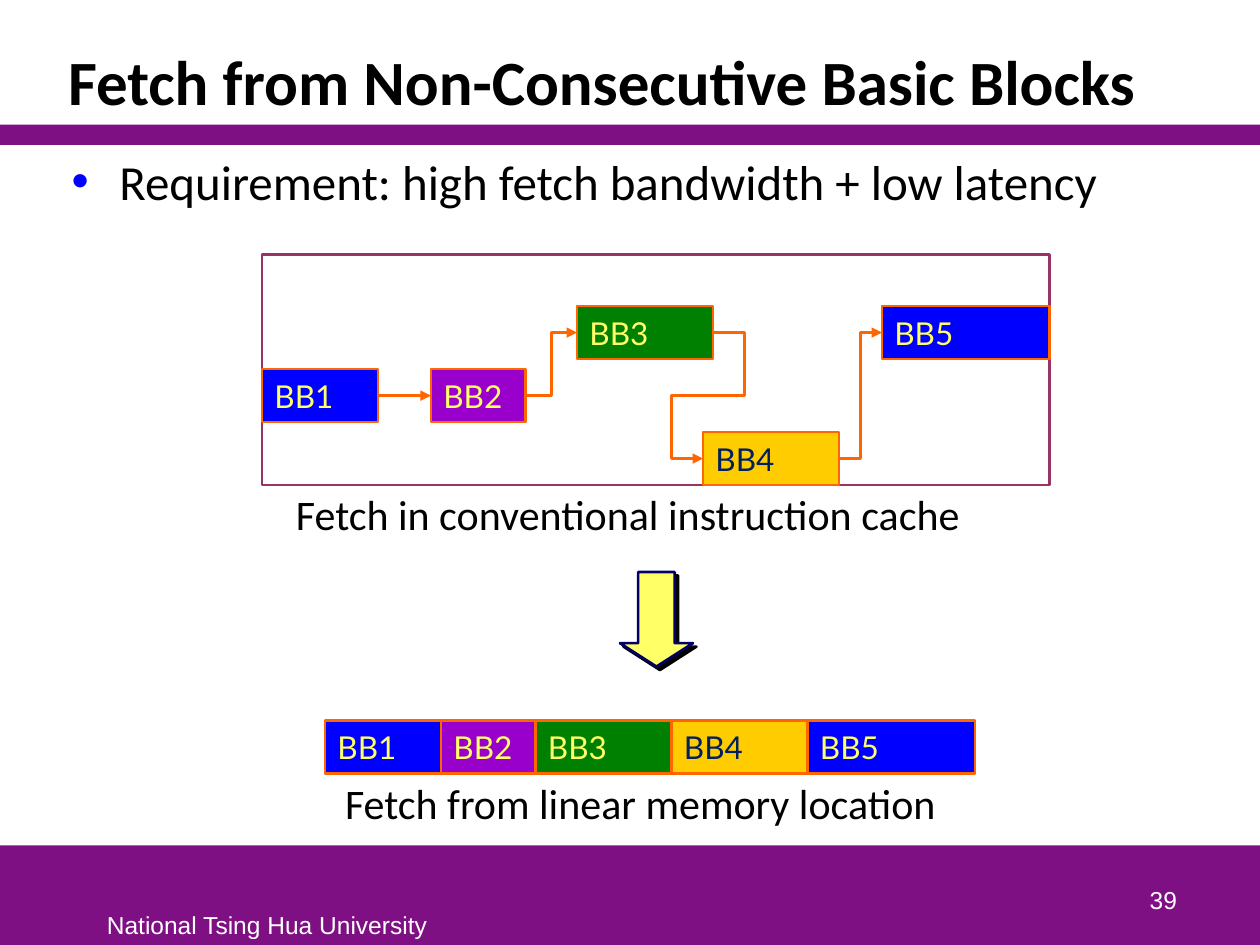
from dataclasses import dataclass

from lxml import etree
from pptx import Presentation
from pptx.dml.color import RGBColor
from pptx.enum.shapes import MSO_CONNECTOR, MSO_SHAPE
from pptx.enum.text import MSO_ANCHOR, MSO_AUTO_SIZE, PP_ALIGN
from pptx.oxml import parse_xml
from pptx.oxml.ns import nsdecls, qn
from pptx.util import Inches, Pt

STRAIGHT, ELBOW = MSO_CONNECTOR.STRAIGHT, MSO_CONNECTOR.ELBOW
RECTANGLE, DOWN_ARROW = MSO_SHAPE.RECTANGLE, MSO_SHAPE.DOWN_ARROW
TOP, MIDDLE, BOTTOM = MSO_ANCHOR.TOP, MSO_ANCHOR.MIDDLE, MSO_ANCHOR.BOTTOM
LEFT, RIGHT = PP_ALIGN.LEFT, PP_ALIGN.RIGHT
NO_AUTOFIT = MSO_AUTO_SIZE.NONE
LEFT_SIDE, RIGHT_SIDE = 1, 3

BLACK = RGBColor(0x00, 0x00, 0x00)
WHITE = RGBColor(0xFF, 0xFF, 0xFF)
PURPLE = RGBColor(0x7F, 0x10, 0x84)
PLUM = RGBColor(0x99, 0x33, 0x66)
ORANGE = RGBColor(0xFF, 0x66, 0x00)
BLUE = RGBColor(0x00, 0x00, 0xFF)
VIOLET = RGBColor(0x99, 0x00, 0xCC)
GREEN = RGBColor(0x00, 0x80, 0x00)
GOLD = RGBColor(0xFF, 0xCC, 0x00)
YELLOW = RGBColor(0xFF, 0xFF, 0x66)
NAVY = RGBColor(0x00, 0x20, 0x60)
DARK_BLUE = RGBColor(0x00, 0x00, 0x66)

BLOCK_HEIGHT = 0.42
LINE_WIDTH = Pt(1.5)


@dataclass(frozen=True)
class BasicBlock:
    name: str
    cache_left: float
    cache_top: float
    width: float
    fill: RGBColor
    text_color: RGBColor = YELLOW


BLOCKS = [
    BasicBlock("BB1", 2.08, 2.93, 0.92, BLUE),
    BasicBlock("BB2", 3.42, 2.93, 0.75, VIOLET),
    BasicBlock("BB3", 4.58, 2.43, 1.08, GREEN),
    BasicBlock("BB4", 5.58, 3.43, 1.08, GOLD, NAVY),
    BasicBlock("BB5", 7.0, 2.43, 1.33, BLUE),
]


def write(shape, text: str, *, size: float, color: RGBColor, font="Calibri",
          bold=False, align=LEFT, anchor=TOP, wrap=True):
    frame = shape.text_frame
    frame.word_wrap = wrap
    frame.auto_size = NO_AUTOFIT
    frame.vertical_anchor = anchor
    para = frame.paragraphs[0]
    para.alignment = align
    span = para.add_run()
    span.text = text
    span.font.name = font
    span.font.size = Pt(size)
    span.font.bold = bold
    span.font.color.rgb = color
    return para


def add_text(page, left: float, top: float, width: float, height: float,
             text: str, **style):
    box = page.shapes.add_textbox(Inches(left), Inches(top), Inches(width), Inches(height))
    return write(box, text, **style)


def add_box(page, left: float, top: float, width: float, height: float,
            fill=None, line=None, kind=RECTANGLE):
    box = page.shapes.add_shape(kind, Inches(left), Inches(top), Inches(width), Inches(height))
    box.shadow.inherit = False
    if fill is None:
        box.fill.background()
    else:
        box.fill.solid()
        box.fill.fore_color.rgb = fill
    if line is None:
        box.line.fill.background()
    else:
        box.line.color.rgb = line
        box.line.width = LINE_WIDTH
    return box


def add_block(page, block: BasicBlock, left: float, top: float):
    box = add_box(page, left, top, block.width, BLOCK_HEIGHT, block.fill, ORANGE)
    write(box, block.name, size=18, color=block.text_color, font="Lato", anchor=MIDDLE)
    return box


def add_jump(page, source, target):
    """Join the right side of one block to the left side of the next."""
    start_x, end_x = source.left + source.width, target.left
    start_y, end_y = source.top + source.height // 2, target.top + target.height // 2
    kind = STRAIGHT if start_y == end_y else ELBOW
    link = page.shapes.add_connector(kind, start_x, start_y, end_x, end_y)
    link.begin_connect(source, RIGHT_SIDE)
    link.end_connect(target, LEFT_SIDE)
    link.line.color.rgb = ORANGE
    link.line.width = LINE_WIDTH
    properties = link._element.spPr
    etree.SubElement(properties.find(qn("a:ln")), qn("a:tailEnd"), type="triangle")
    etree.SubElement(properties, qn("a:effectLst"))
    if end_x < start_x:
        loop_back(properties.find(qn("a:prstGeom")), start_x - end_x)
    return link


def loop_back(geometry, span: int) -> None:
    """Route a connector out past its start and in from before its end."""
    reach = round(Inches(0.25) / span * 100000)
    geometry.set("prst", "bentConnector5")
    guides = geometry.get_or_add_avLst()
    for number, value in enumerate((-reach, 50000, 100000 + reach), start=1):
        etree.SubElement(guides, qn("a:gd"), name=f"adj{number}", fmla=f"val {value}")


def add_bullet(para, color: RGBColor) -> None:
    properties = para._p.get_or_add_pPr()
    properties.set("marL", str(Inches(0.38)))
    properties.set("indent", str(-Inches(0.38)))
    bullet_color = etree.SubElement(properties, qn("a:buClr"))
    etree.SubElement(bullet_color, qn("a:srgbClr"), val=str(color))
    etree.SubElement(properties, qn("a:buFont"), typeface="Arial")
    etree.SubElement(properties, qn("a:buChar"), char="•")


def add_hard_shadow(shape) -> None:
    properties = shape._element.spPr
    properties.remove(properties.find(qn("a:effectLst")))
    properties.append(parse_xml(
        f'<a:effectLst {nsdecls("a")}><a:outerShdw dist="{Pt(2.8)}" dir="2700000" '
        'algn="ctr" rotWithShape="0"><a:srgbClr val="000000"/></a:outerShdw></a:effectLst>'))


def draw_frame(page) -> None:
    add_box(page, 0, 6.71, 10, 0.79, PURPLE)
    add_box(page, 0, 0.99, 10, 0.16, PURPLE)
    add_text(page, 0.75, 7.17, 2.76, 0.33, "National Tsing Hua University",
             size=14, color=WHITE, font="Arial", wrap=False)
    add_text(page, 7.36, 6.81, 2.08, 0.5, "39", size=14, color=WHITE,
             font="Arial", align=RIGHT, anchor=BOTTOM)
    title = page.shapes.title
    title.left, title.top = Inches(0.44), Inches(0.25)
    title.width, title.height = Inches(8.97), Inches(0.74)
    para = write(title, "Fetch from Non-Consecutive Basic Blocks", size=36,
                 color=BLACK, bold=True, anchor=BOTTOM)
    para.line_spacing = 0.85


def draw_cache(page) -> None:
    add_box(page, 2.08, 2.02, 6.25, 1.83, line=PLUM)
    boxes = [add_block(page, block, block.cache_left, block.cache_top) for block in BLOCKS]
    for source, target in zip(boxes, boxes[1:]):
        add_jump(page, source, target)
    add_text(page, 2.25, 3.83, 5.52, 0.5, "Fetch in conventional instruction cache",
             size=24, color=BLACK, wrap=False)


def draw_linear_memory(page) -> None:
    left = 2.58
    for block in BLOCKS:
        add_block(page, block, left, 5.72)
        left += block.width
    add_text(page, 2.64, 6.12, 4.93, 0.5, "Fetch from linear memory location",
             size=24, color=BLACK, wrap=False)


def main() -> None:
    deck = Presentation()
    deck.slide_width, deck.slide_height = Inches(10), Inches(7.5)
    page = deck.slides.add_slide(deck.slide_layouts[5])
    draw_frame(page)
    requirement = add_text(page, 0.47, 1.15, 8.94, 5.43,
                           "Requirement: high fetch bandwidth + low latency",
                           size=28, color=BLACK)
    add_bullet(requirement, BLUE)
    draw_cache(page)
    draw_linear_memory(page)
    arrow = add_box(page, 4.92, 4.54, 0.58, 0.75, YELLOW, DARK_BLUE, DOWN_ARROW)
    arrow.adjustments[1] = 0.32
    add_hard_shadow(arrow)
    deck.save("out.pptx")


if __name__ == "__main__":
    main()
